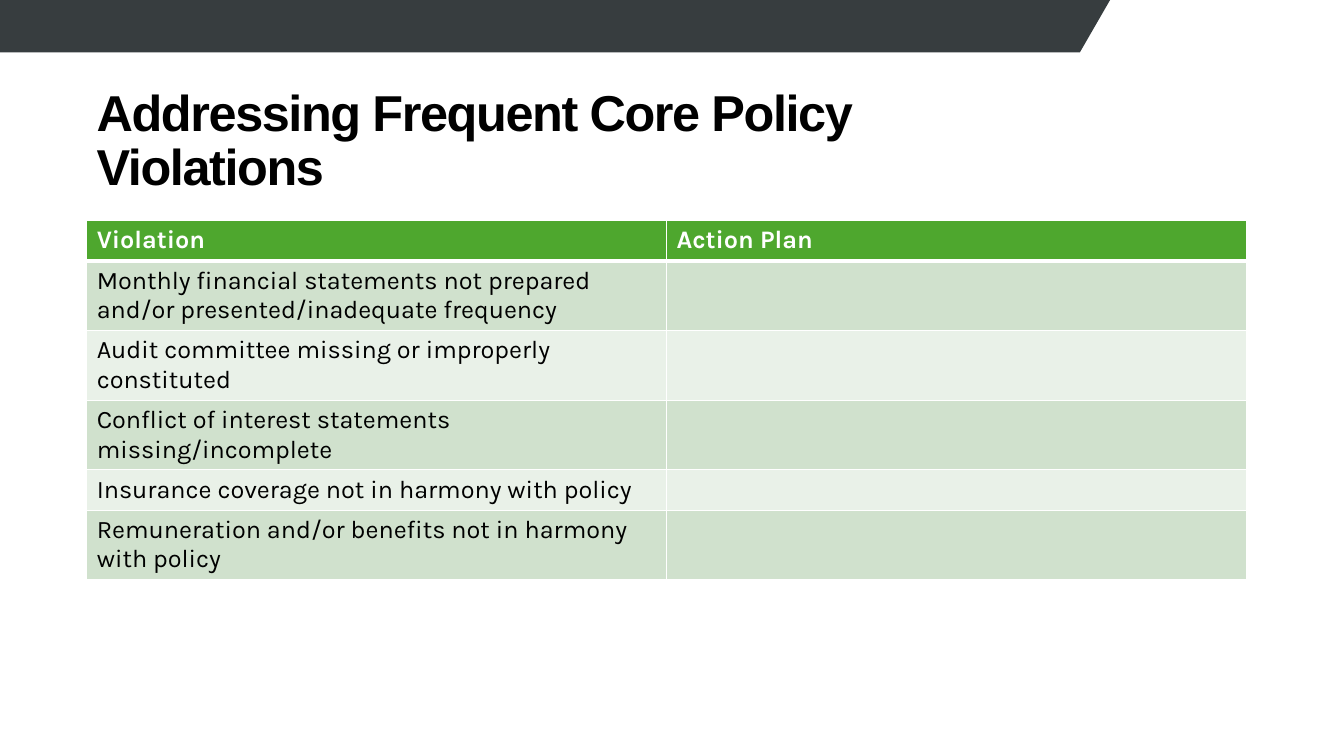
import dataclasses

import lxml.etree
import pptx
import pptx.dml.color
import pptx.enum.text
import pptx.oxml.ns
import pptx.slide
import pptx.table
import pptx.text.text
import pptx.util


@dataclasses.dataclass(frozen=True)
class Theme:
    banner: str = "373D3F"
    header: str = "4EA72E"
    bands: tuple[str, str] = ("D0E1CD", "E9F1E8")
    light: str = "FFFFFF"
    dark: str = "000000"
    title_font: str = "Arial"
    table_font: str = "Karla"
    title_size: int = 36
    table_size: int = 18
    thin_border: int = 1
    thick_border: int = 3


@dataclasses.dataclass(frozen=True)
class PlanRow:
    violation: str
    action: str = ""


THEME = Theme()
HEADER = PlanRow("Violation", "Action Plan")
VIOLATIONS = [
    PlanRow("Monthly financial statements not prepared and/or presented/inadequate frequency"),
    PlanRow("Audit committee missing or improperly constituted"),
    PlanRow("Conflict of interest statements missing/incomplete"),
    PlanRow("Insurance coverage not in harmony with policy"),
    PlanRow("Remuneration and/or benefits not in harmony with policy"),
]
# Banner corners in hundredths of an inch, since freeform points are whole numbers
BANNER_POINTS = [(0, 0), (1101, 0), (1071, 52), (0, 52)]
LEFT = 0.86
COLUMN_WIDTH = 5.75
ROW_HEIGHT = 0.4


def color(value: str) -> pptx.dml.color.RGBColor:
    return pptx.dml.color.RGBColor.from_string(value)


def format_runs(paragraph: pptx.text.text._Paragraph, font: str, size: int,
                ink: str, bold: bool) -> None:
    for span in paragraph.runs:
        span.font.name = font
        span.font.size = pptx.util.Pt(size)
        span.font.color.rgb = color(ink)
        span.font.bold = bold


def draw_banner(page: pptx.slide.Slide) -> None:
    start, *rest = BANNER_POINTS
    builder = page.shapes.build_freeform(*start, scale=pptx.util.Inches(0.01))
    builder.add_line_segments(rest, close=True)
    banner = builder.convert_to_shape()
    banner.shadow.inherit = False
    banner.fill.solid()
    banner.fill.fore_color.rgb = color(THEME.banner)
    banner.line.fill.background()


def draw_title(page: pptx.slide.Slide, text: str) -> None:
    box = page.shapes.add_textbox(pptx.util.Inches(LEFT), pptx.util.Inches(0.77),
                                  pptx.util.Inches(9.79), pptx.util.Inches(1.23))
    frame = box.text_frame
    frame.word_wrap = True
    frame.vertical_anchor = pptx.enum.text.MSO_ANCHOR.BOTTOM
    frame.text = text
    para = frame.paragraphs[0]
    para.line_spacing = 0.9
    format_runs(para, THEME.title_font, THEME.title_size, THEME.dark, True)
    # Tighten the letter spacing by one point
    para.runs[0].font._element.set("spc", "-100")


def set_borders(cell: pptx.table._Cell, top: int, bottom: int) -> None:
    properties = cell._tc.get_or_add_tcPr()
    widths = {"L": THEME.thin_border, "R": THEME.thin_border, "T": top, "B": bottom}
    qualified = pptx.oxml.ns.qn
    for side, width in widths.items():
        line = lxml.etree.SubElement(properties, qualified(f"a:ln{side}"),
                                     w=str(pptx.util.Pt(width)))
        fill = lxml.etree.SubElement(line, qualified("a:solidFill"))
        lxml.etree.SubElement(fill, qualified("a:srgbClr"), val=THEME.light)


def draw_table(page: pptx.slide.Slide, header: PlanRow, rows: list[PlanRow]) -> None:
    entries = [header, *rows]
    table = page.shapes.add_table(
        len(entries), 2, pptx.util.Inches(LEFT), pptx.util.Inches(2.19),
        pptx.util.Inches(2 * COLUMN_WIDTH),
        pptx.util.Inches(len(entries) * ROW_HEIGHT)).table
    for column in table.columns:
        column.width = pptx.util.Inches(COLUMN_WIDTH)

    for index, entry in enumerate(entries):
        table.rows[index].height = pptx.util.Inches(ROW_HEIGHT)
        is_header = index == 0
        background = THEME.header if is_header else THEME.bands[(index - 1) % 2]
        ink = THEME.light if is_header else THEME.dark
        # The thick rule separates the header from the first row
        top = THEME.thick_border if index == 1 else THEME.thin_border
        bottom = THEME.thick_border if is_header else THEME.thin_border
        for cell, text in zip(table.rows[index].cells, (entry.violation, entry.action)):
            cell.margin_bottom = pptx.util.Inches(0.04)
            set_borders(cell, top, bottom)
            cell.fill.solid()
            cell.fill.fore_color.rgb = color(background)
            if text:
                cell.text_frame.text = text
                format_runs(cell.text_frame.paragraphs[0], THEME.table_font,
                            THEME.table_size, ink, is_header)


def main() -> None:
    deck = pptx.Presentation()
    deck.slide_width = pptx.util.Inches(13.33)
    deck.slide_height = pptx.util.Inches(7.5)
    page = deck.slides.add_slide(deck.slide_layouts[6])
    draw_banner(page)
    draw_title(page, "Addressing Frequent Core Policy Violations")
    draw_table(page, HEADER, VIOLATIONS)
    deck.save("out.pptx")


if __name__ == "__main__":
    main()
